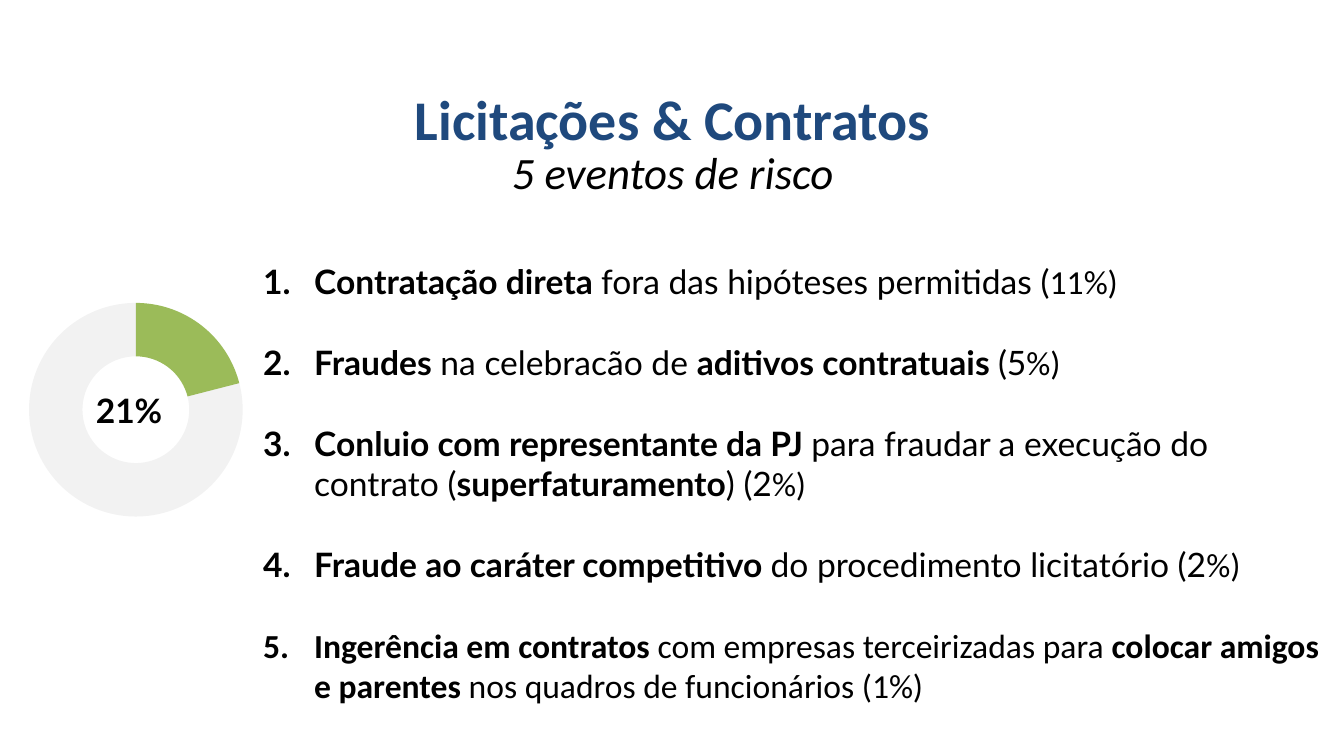
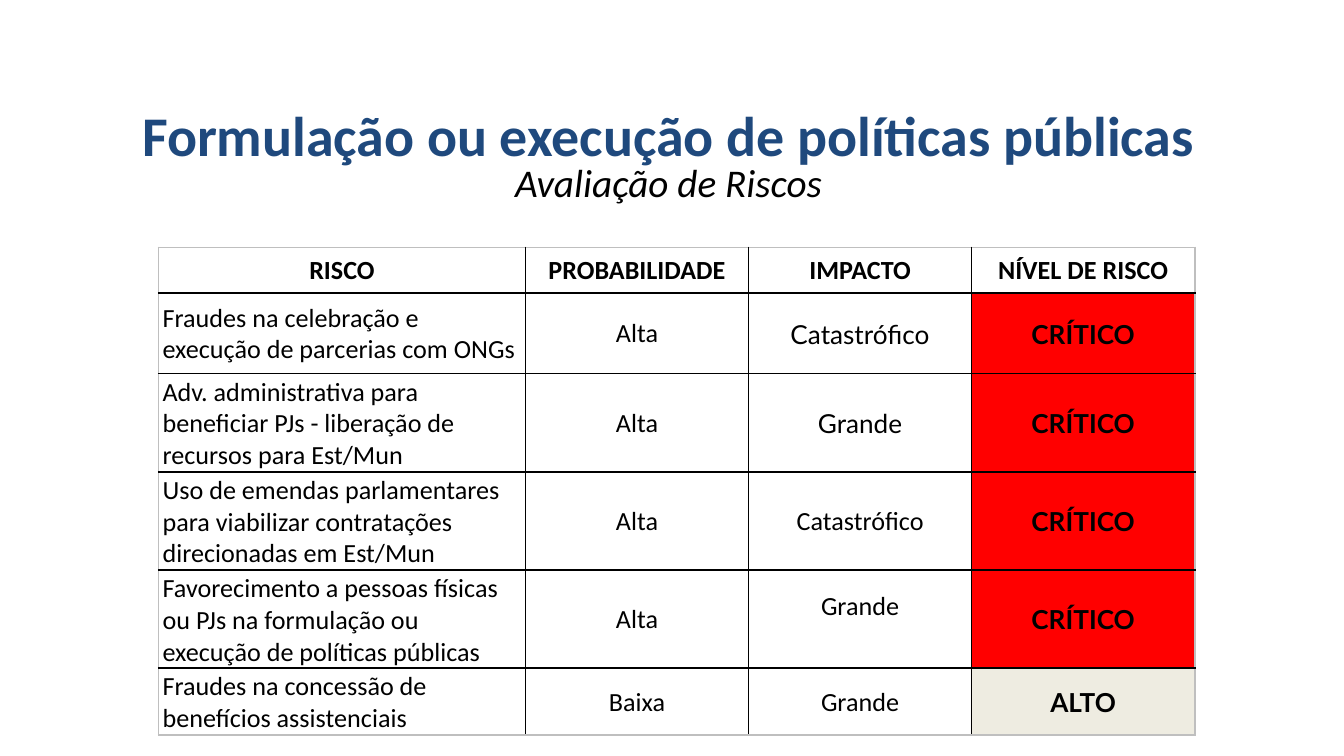
from lxml.etree import SubElement
from pptx import Presentation
from pptx.chart.data import CategoryChartData
from pptx.dml.color import RGBColor
from pptx.enum.chart import XL_CHART_TYPE as ChartType
from pptx.enum.text import MSO_ANCHOR as Anchor, MSO_AUTO_SIZE as AutoSize, PP_ALIGN as Align
from pptx.oxml.ns import qn
from pptx.util import Inches, Pt

COLORS = {
    "title": "1F497D",
    "text": "000000",
    "share": "9BBB59",
    "rest": "808080",
    "critical": "FF0000",
    "high": "EEECE1",
    "grid": "000000",
    "frame": "BFBFBF",
}
BODY = "Calibri"
ACCENT = "Lato"
SLIDE_WIDTH = 10

RISK_EVENTS = [
    [("Contratação direta ", ACCENT, True), ("fora das hipóteses permitidas (", ACCENT, False),
     ("11%)", BODY, False)],
    [("Fraudes", ACCENT, True), (" na celebracão de ", ACCENT, False),
     ("aditivos contratuais ", ACCENT, True), ("(5", ACCENT, False), ("%)", BODY, False)],
    [("Conluio com representante da PJ ", ACCENT, True),
     ("para fraudar a execução do contrato (", ACCENT, False),
     ("superfaturamento", ACCENT, True), (") (2", ACCENT, False), ("%)", BODY, False)],
    [("Fraude ao caráter competitivo ", ACCENT, True),
     ("do procedimento licitatório (2", ACCENT, False), ("%)", BODY, False)],
    [("Ingerência em contratos ", BODY, True), ("com empresas terceirizadas para ", BODY, False),
     ("colocar amigos e parentes ", BODY, True),
     ("nos quadros de funcionários (1%)", BODY, False)],
]

HEADERS = ["RISCO", "PROBABILIDADE", "IMPACTO", "NÍVEL DE RISCO"]
RISKS = [
    ("Fraudes na celebração e execução de parcerias com ONGs",
     "Alta", "Catastrófico", "CRÍTICO"),
    ("Adv. administrativa para beneficiar PJs - liberação de recursos para Est/Mun",
     "Alta", "Grande", "CRÍTICO"),
    ("Uso de emendas parlamentares para viabilizar contratações direcionadas em Est/Mun",
     "Alta", "Catastrófico", "CRÍTICO"),
    ("Favorecimento a pessoas físicas ou PJs na formulação ou execução de políticas públicas",
     "Alta", "Grande", "CRÍTICO"),
    ("Fraudes na concessão de benefícios assistenciais",
     "Baixa", "Grande", "ALTO"),
]
LEVEL_COLORS = {"CRÍTICO": "critical", "ALTO": "high"}
COLUMN_WIDTHS = [2.73, 1.66, 1.66, 1.66]
ROW_HEIGHTS = [0.34, 0.6, 0.71, 0.72, 0.71, 0.49]
ACCENT_IMPACT_ROWS = (1, 2)
RAISED_IMPACT_ROW = 4


def rgb(name):
    return RGBColor.from_string(COLORS[name])


def write(paragraph, text, size=18, font=BODY, color="text", bold=False, italic=False,
          align=None):
    if align is not None:
        paragraph.alignment = align
    run = paragraph.add_run()
    run.text = text
    run.font.size = Pt(size)
    run.font.name = font
    run.font.bold = bold
    run.font.italic = italic
    run.font.color.rgb = rgb(color)


def add_text_box(slide, left, top, width, height):
    shape = slide.shapes.add_textbox(Inches(left), Inches(top), Inches(width), Inches(height))
    shape.text_frame.word_wrap = True
    return shape.text_frame


def add_heading(slide, title, title_box, subtitle, subtitle_box, subtitle_size):
    shape = slide.shapes.title
    shape.left, shape.top, shape.width, shape.height = map(Inches, title_box)
    frame = shape.text_frame
    frame.word_wrap = False
    frame.auto_size = AutoSize.NONE
    frame.vertical_anchor = Anchor.TOP
    write(frame.paragraphs[0], title, size=30, color="title", bold=True, align=Align.CENTER)
    frame = add_text_box(slide, *subtitle_box)
    write(frame.paragraphs[0], subtitle, size=subtitle_size, italic=True, align=Align.CENTER)


def place_plot(chart, left, top, width, height):
    plot_area = chart.plots[0]._element.getparent()
    layout = plot_area.find(qn("c:layout"))
    if layout is None:
        layout = plot_area.makeelement(qn("c:layout"))
        plot_area.insert(0, layout)
    manual = SubElement(layout, qn("c:manualLayout"))
    settings = [("layoutTarget", "inner"), ("xMode", "edge"), ("yMode", "edge"),
                ("x", left), ("y", top), ("w", width), ("h", height)]
    for tag, value in settings:
        SubElement(manual, qn(f"c:{tag}")).set("val", str(value))


def add_share_chart(slide, left, top, width, height, share):
    data = CategoryChartData()
    data.categories = ["1", "2"]
    data.add_series("Series 1", [share, 100 - share])
    chart = slide.shapes.add_chart(ChartType.DOUGHNUT, Inches(left), Inches(top),
                                   Inches(width), Inches(height), data).chart
    chart.has_legend = False
    chart.has_title = False
    chart.font.size = Pt(10)
    chart.font.name = BODY
    chart.font.color.rgb = rgb("text")
    plot = chart.plots[0]
    plot.vary_by_categories = True
    plot.has_data_labels = False
    plot._element.find(qn("c:holeSize")).set("val", "80")
    place_plot(chart, 0.15, 0.12, 0.71, 0.75)
    for index, color in enumerate(["share", "rest"]):
        point = plot.series[0].points[index].format
        point.fill.solid()
        point.fill.fore_color.rgb = rgb(color)
        point.line.fill.background()
    rest_color = point.fill._xPr.find(".//" + qn("a:srgbClr"))
    SubElement(rest_color, qn("a:alpha")).set("val", "10000")
    frame = add_text_box(slide, left + 0.65, top + 0.85, 0.88, 0.4)
    write(frame.paragraphs[0], f"{share}%", font=ACCENT, bold=True, align=Align.CENTER)


def number_paragraph(paragraph, number, indent):
    properties = paragraph._p.get_or_add_pPr()
    properties.set("marL", str(Inches(indent)))
    properties.set("indent", str(-Inches(indent)))
    bullet = SubElement(properties, qn("a:buAutoNum"))
    bullet.set("type", "arabicPeriod")
    bullet.set("startAt", str(number))


def add_event_list(slide, left, top, width, height, events):
    frame = add_text_box(slide, left, top, width, height)
    frame.margin_top = Inches(0.25)
    for number, runs in enumerate(events, 1):
        paragraph = frame.paragraphs[0] if number == 1 else frame.add_paragraph()
        number_paragraph(paragraph, number, 0.38)
        if number > 1:
            paragraph.space_before = Pt(21.8)
        for text, font, bold in runs:
            write(paragraph, text, font=font, bold=bold)


def set_borders(cell, edges):
    properties = cell._tc.get_or_add_tcPr()
    for side, color in edges.items():
        line = SubElement(properties, qn(f"a:ln{side}"))
        line.set("w", str(Pt(1)))
        fill = SubElement(line, qn("a:solidFill"))
        SubElement(fill, qn("a:srgbClr")).set("val", COLORS[color])


def format_cell(cell, text, row, column):
    cell.vertical_anchor = Anchor.MIDDLE
    cell.margin_left = cell.margin_right = Inches(0.03)
    cell.margin_top = Inches(0.02)
    raised = column == 2 and row == RAISED_IMPACT_ROW
    cell.margin_bottom = Inches(0.2 if raised else 0.01)
    outer = {"L": column == 0, "R": column == len(HEADERS) - 1,
             "T": row == 0, "B": row == len(RISKS)}
    set_borders(cell, {side: "frame" if edge else "grid" for side, edge in outer.items()})
    if text in LEVEL_COLORS:
        cell.fill.solid()
        cell.fill.fore_color.rgb = rgb(LEVEL_COLORS[text])
    else:
        cell.fill.background()
    accent = text in LEVEL_COLORS or (column == 2 and row in ACCENT_IMPACT_ROWS)
    write(cell.text_frame.paragraphs[0], text, size=14, font=ACCENT if accent else BODY,
          bold=row == 0 or text in LEVEL_COLORS,
          align=Align.LEFT if row and column == 0 else Align.CENTER)


def add_risk_table(slide, left, top):
    rows = [HEADERS, *RISKS]
    table = slide.shapes.add_table(len(rows), len(HEADERS), Inches(left), Inches(top),
                                   Inches(sum(COLUMN_WIDTHS)), Inches(sum(ROW_HEIGHTS))).table
    table.first_row = False
    table.horz_banding = False
    for column, width in zip(table.columns, COLUMN_WIDTHS):
        column.width = Inches(width)
    for row, height in zip(table.rows, ROW_HEIGHTS):
        row.height = Inches(height)
    for row, texts in enumerate(rows):
        for column, text in enumerate(texts):
            format_cell(table.cell(row, column), text, row, column)


def build_events_slide(slide):
    add_share_chart(slide, -0.13, 2, 2.26, 2.12, 21)
    add_event_list(slide, 1.86, 1.69, 8.14, 3.9, RISK_EVENTS)
    add_heading(slide, "Licitações & Contratos", (2.97, 0.58, 4.07, 0.61),
                "5 eventos de risco", (1.1, 1.03, 7.81, 0.5), 24)


def build_assessment_slide(slide):
    add_heading(slide, "Formulação ou execução de políticas públicas", (0.92, 0.7, 8.11, 0.61),
                "Avaliação de Riscos", (1.07, 1.13, 7.81, 0.45), 21)
    add_risk_table(slide, 1.18, 1.84)


def main():
    presentation = Presentation()
    presentation.slide_width = Inches(SLIDE_WIDTH)
    presentation.slide_height = Inches(SLIDE_WIDTH * 9 / 16)
    title_only = presentation.slide_layouts[5]
    for build in (build_events_slide, build_assessment_slide):
        build(presentation.slides.add_slide(title_only))
    presentation.save("out.pptx")


if __name__ == "__main__":
    main()
